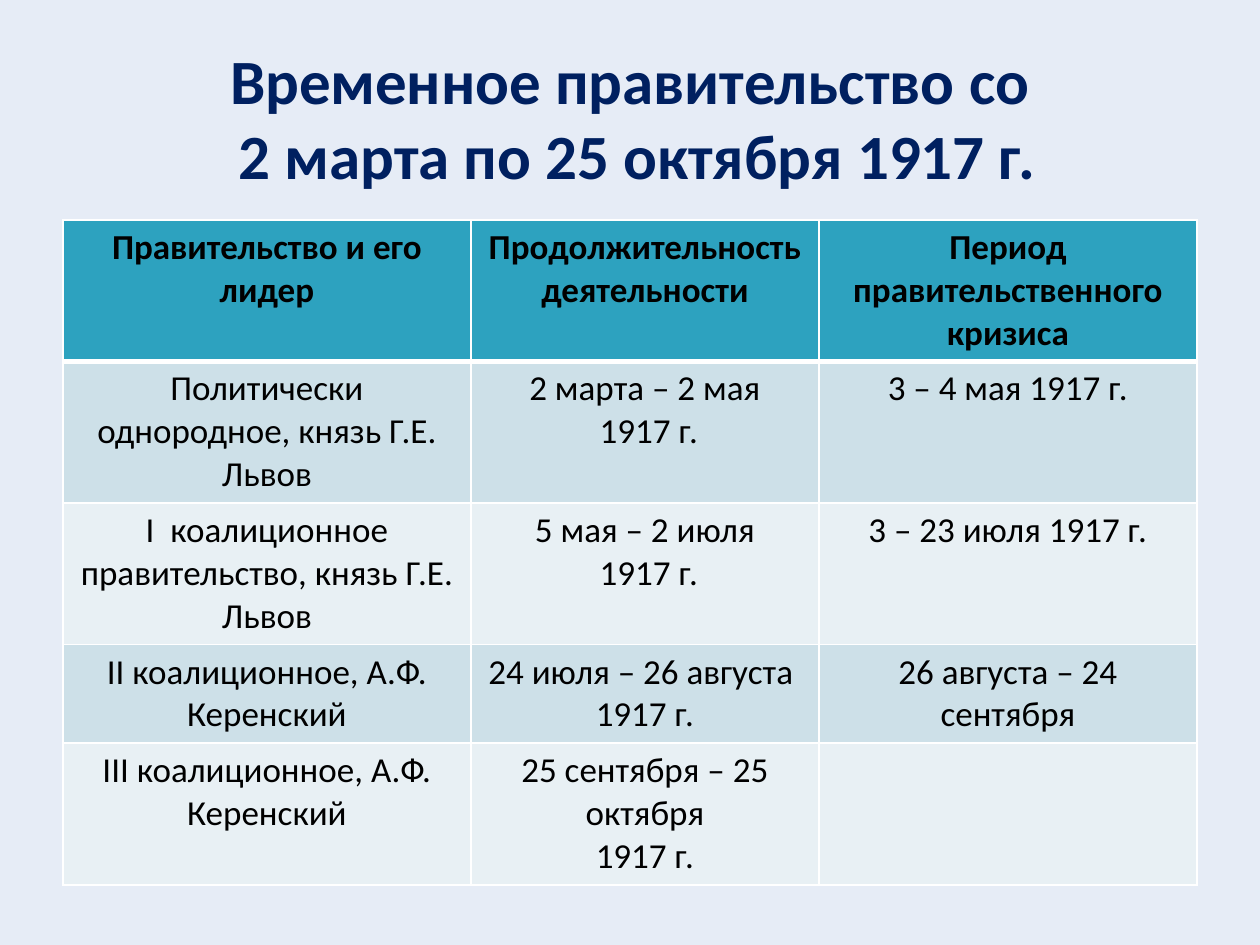
from lxml import etree
from pptx import Presentation
from pptx.dml.color import RGBColor
from pptx.enum.text import MSO_ANCHOR, PP_ALIGN
from pptx.oxml.ns import qn
from pptx.util import Emu, Pt

CENTER = PP_ALIGN.CENTER
MIDDLE = MSO_ANCHOR.MIDDLE
TITLE_ONLY = 5
PX_PER_INCH = 126
FONT = "Calibri"
COLORS = {
    "background": "E6ECF6",
    "title": "002060",
    "text": "000000",
    "header": "2DA2BF",
    "band_dark": "CDE0E8",
    "band_light": "E8F0F4",
    "border": "FFFFFF",
}

TITLE = "Временное правительство со\v 2 марта по 25 октября 1917 г."
COLUMN_WIDTHS = [408, 348, 378]
ROW_HEIGHTS = [141, 142, 141, 98, 142]
GOVERNMENTS = [
    ["Правительство и его лидер", "Продолжительность деятельности",
     "Период правительственного кризиса"],
    ["Политически однородное, князь Г.Е. Львов", "2 марта – 2 мая\n 1917 г.",
     "3 – 4 мая 1917 г."],
    ["I  коалиционное правительство, князь Г.Е. Львов", "5 мая – 2 июля\n 1917 г.",
     "3 – 23 июля 1917 г."],
    ["II коалиционное, А.Ф. Керенский", "24 июля – 26 августа \n1917 г.",
     "26 августа – 24 сентября"],
    ["III коалиционное, А.Ф. Керенский", "25 сентября – 25 октября\n1917 г.", ""],
]


def px(n):
    return Emu(round(n * 914400 / PX_PER_INCH))


def rgb(name):
    return RGBColor.from_string(COLORS[name])


class SlideBuilder:
    def __init__(self, prs):
        self.slide = prs.slides.add_slide(prs.slide_layouts[TITLE_ONLY])

    def background(self, color):
        fill = self.slide.background.fill
        fill.solid()
        fill.fore_color.rgb = rgb(color)

    def style_text(self, tf, size, color, bold):
        for p in tf.paragraphs:
            p.alignment = CENTER
            p.font.name = FONT
            p.font.size = Pt(size)
            p.font.bold = bold
            p.font.color.rgb = rgb(color)

    def title(self, text, x, y, w, h):
        sp = self.slide.shapes.title
        sp.left, sp.top, sp.width, sp.height = map(px, (x, y, w, h))
        tf = sp.text_frame
        tf.text = text
        tf.vertical_anchor = MIDDLE
        self.style_text(tf, 36, "title", True)

    def borders(self, cell, bottom):
        tcPr = cell._tc.get_or_add_tcPr()
        for side, width in (("L", 1), ("R", 1), ("T", 1), ("B", bottom)):
            ln = etree.SubElement(tcPr, qn(f"a:ln{side}"), w=str(Pt(width)))
            fill = etree.SubElement(ln, qn("a:solidFill"))
            etree.SubElement(fill, qn("a:srgbClr"), val=COLORS["border"])

    def cell(self, cell, text, fill, bold, bottom):
        cell.text = text
        self.style_text(cell.text_frame, 20, "text", bold)
        self.borders(cell, bottom)
        cell.fill.solid()
        cell.fill.fore_color.rgb = rgb(fill)

    def table(self, rows, x, y, widths, heights):
        frame = self.slide.shapes.add_table(
            len(rows), len(widths), px(x), px(y), px(sum(widths)), px(sum(heights)))
        table = frame.table
        for column, width in zip(table.columns, widths):
            column.width = px(width)
        for r, (row, height) in enumerate(zip(rows, heights)):
            table.rows[r].height = px(height)
            header = r == 0
            band = "band_dark" if r % 2 else "band_light"
            for c, text in enumerate(row):
                self.cell(table.cell(r, c), text, "header" if header else band,
                          header, 3 if header else 1)


def main():
    prs = Presentation()
    prs.slide_width, prs.slide_height = px(1260), px(945)
    s = SlideBuilder(prs)
    s.background("background")
    s.title(TITLE, 63, 38, 1134, 158)
    s.table(GOVERNMENTS, 63, 220, COLUMN_WIDTHS, ROW_HEIGHTS)
    prs.save("out.pptx")


if __name__ == "__main__":
    main()
